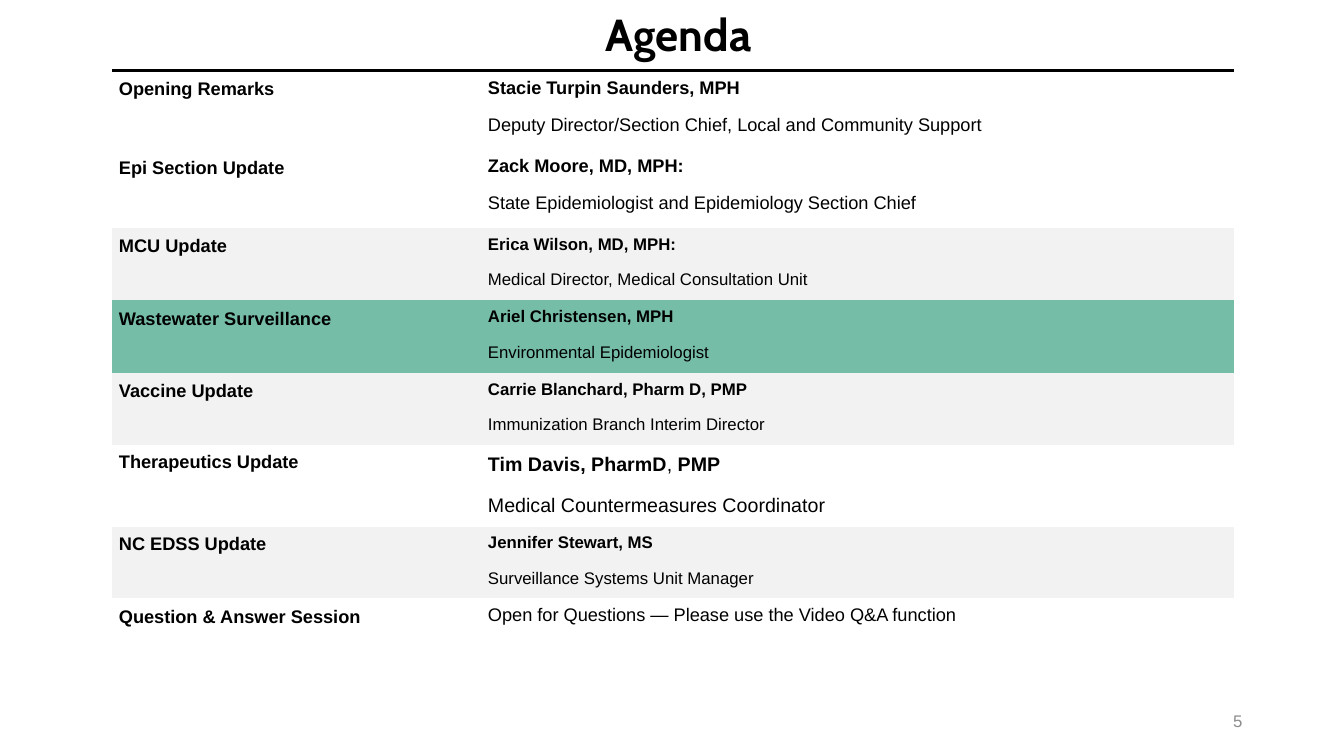
from pptx import Presentation
from pptx.dml.color import RGBColor
from pptx.enum.text import MSO_ANCHOR as ANCHOR, MSO_AUTO_SIZE as AUTO, PP_ALIGN as ALIGN
from pptx.oxml import parse_xml
from pptx.oxml.ns import nsdecls
from pptx.util import Inches, Pt


def rgb(value):
    return RGBColor.from_string(value)


def add_run(p, text, size, bold=False, color="000000", name="Arial"):
    r = p.add_run()
    r.text = text
    r.font.color.rgb = rgb(color)
    for key, value in {"size": Pt(size), "bold": bold, "name": name}.items():
        setattr(r.font, key, value)


GRAY, GREEN = "F2F2F2", "75BDA7"
COLS = [3.66, 7.47]
AGENDA = [
    ("Opening Remarks", [[("Stacie Turpin Saunders, MPH", True)],
     [("Deputy Director/Section Chief, Local and Community Support", False)]], 13, 0.78, None, 1.07, 1),
    ("Epi Section Update", [[("Zack Moore, MD, MPH:", True)],
     [("State Epidemiologist and Epidemiology Section Chief", False)]], 13, 0.78, None, 1.07, 1),
    ("MCU Update", [[("Erica Wilson, MD, MPH:", True)],
     [("Medical Director, Medical Consultation Unit", False)]], 12, 0.72, GRAY, 1.07, 1),
    ("Wastewater Surveillance", [[("Ariel Christensen, MPH", True)],
     [("Environmental Epidemiologist", False)]], 12, 0.72, GREEN, 1.07, 1),
    ("Vaccine Update", [[("Carrie Blanchard, Pharm D, PMP", True)],
     [("Immunization Branch Interim Director", False)]], 12, 0.72, GRAY, 1.07, 1),
    ("Therapeutics Update", [[("Tim Davis, PharmD", True), (", ", False), ("PMP", True)],
     [("Medical Countermeasures Coordinator", False)]], 14, 0.8, None, 1, 1.07),
    ("NC EDSS Update", [[("Jennifer Stewart, MS", True)],
     [("Surveillance Systems Unit Manager", False)]], 12, 0.71, GRAY, 1, 1),
    ("Question & Answer Session",
     [[("Open for Questions — Please use the Video Q&A function", False)]], 13, 0.4, None, 1.07, 1),
]

prs = Presentation()
prs.slide_width, prs.slide_height = Inches(13.33), Inches(7.5)
s = prs.slides.add_slide(prs.slide_layouts[5])

title = s.shapes.title
for key, value in {"left": 5.87, "top": 0.02, "width": 1.72, "height": 0.64}.items():
    setattr(title, key, Inches(value))
for key, value in {"word_wrap": False, "auto_size": AUTO.SHAPE_TO_FIT_TEXT, "vertical_anchor": ANCHOR.TOP}.items():
    setattr(title.text_frame, key, value)
add_run(title.text_frame.paragraphs[0], "Agenda", 32, True, name="Cabin")

frame = s.shapes.add_table(len(AGENDA), len(COLS), Inches(1.11), Inches(0.7),
                           Inches(sum(COLS)), Inches(sum(row[3] for row in AGENDA)))
table = frame.table
table.first_row = table.horz_banding = False
table._tbl.tblPr[0].text = "{2D5ABB26-0587-4C30-8999-92F81FD0307C}"
for col, width in zip(table.columns, COLS):
    col.width = Inches(width)

for i, (topic, speaker, size, height, fill, topic_ls, speaker_ls) in enumerate(AGENDA):
    table.rows[i].height = Inches(height)
    contents = [([[(topic, True)]], 13, topic_ls), (speaker, size, speaker_ls)]
    for j, (lines, pt, spacing) in enumerate(contents):
        cell = table.cell(i, j)
        for side in ("left", "top", "right", "bottom"):
            setattr(cell, f"margin_{side}", Inches(0.07))
        if fill:
            cell.fill.solid()
            cell.fill.fore_color.rgb = rgb(fill)
        else:
            cell.fill.background()
        tf = cell.text_frame
        for k, line in enumerate(lines):
            p = tf.add_paragraph() if k else tf.paragraphs[0]
            p.space_before, p.space_after = Pt(6 if k else 0), Pt(6)
            p.line_spacing = float(spacing)
            for text, bold in line:
                add_run(p, text, pt, bold)
        if i == 0:
            cell._tc.get_or_add_tcPr().insert(0, parse_xml(
                f'<a:lnT {nsdecls("a")} w="{Pt(2.25)}"><a:solidFill>'
                '<a:srgbClr val="000000"/></a:solidFill></a:lnT>'))

number = s.shapes.add_textbox(Inches(9.42), Inches(6.95), Inches(3), Inches(0.4))
tf = number.text_frame
tf.word_wrap, tf.vertical_anchor = True, ANCHOR.MIDDLE
tf.paragraphs[0].alignment = ALIGN.RIGHT
add_run(tf.paragraphs[0], "5", 12, color="8C8C8C")

prs.save("out.pptx")
